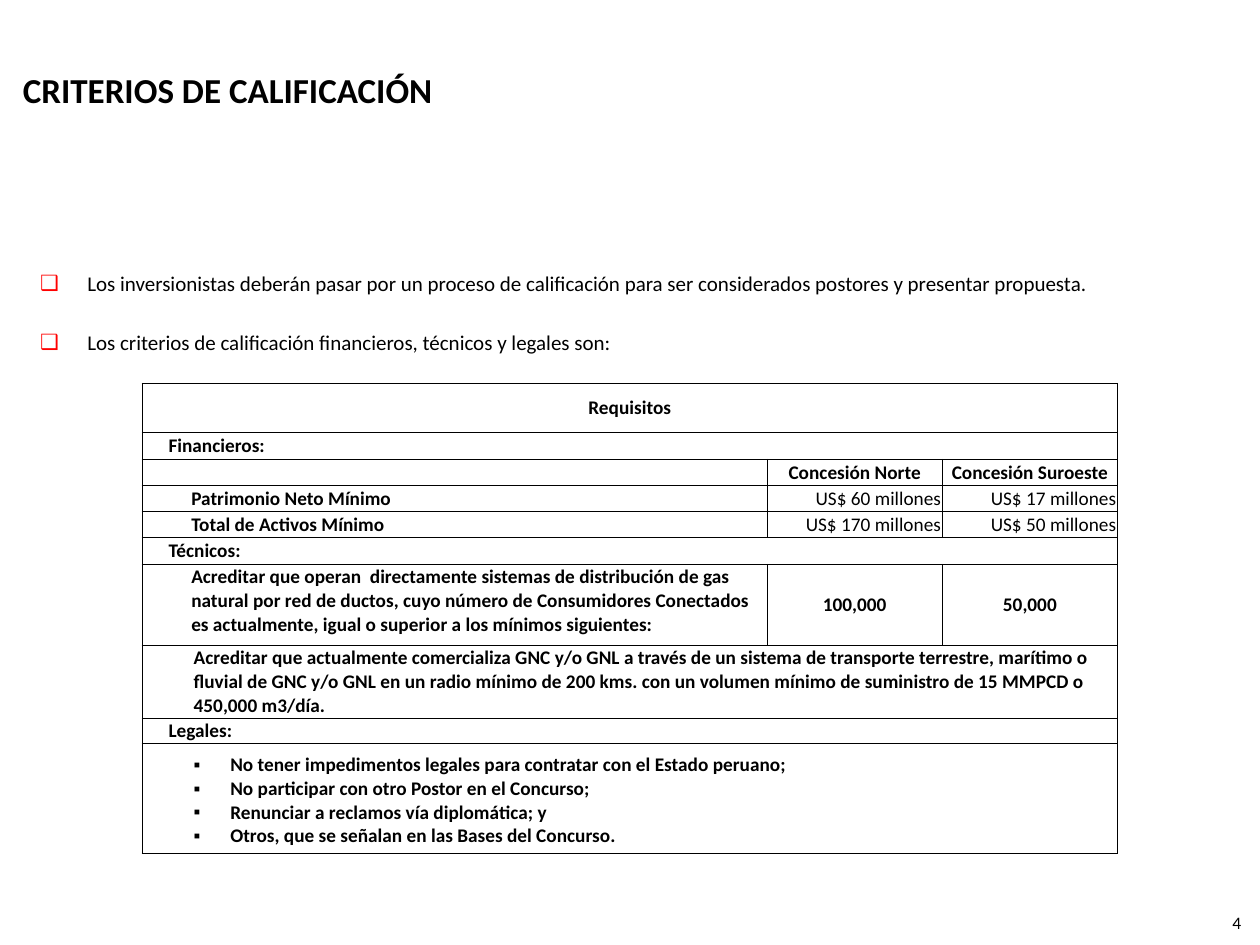
from lxml.etree import SubElement
from pptx import Presentation
from pptx.dml.color import RGBColor
from pptx.enum.text import MSO_ANCHOR as Anchor, PP_ALIGN as Align
from pptx.oxml.ns import qn
from pptx.util import Pt

BLACK = RGBColor(0, 0, 0)
RED = RGBColor(255, 0, 0)
FONT = "Calibri"

# Content
TITLE = "CRITERIOS DE CALIFICACIÓN"
POINTS = [
    "Los inversionistas deberán pasar por un proceso de calificación para ser "
    "considerados postores y presentar propuesta.",
    "Los criterios de calificación financieros, técnicos y legales son:",
]
LEGAL = [
    "No tener impedimentos legales para contratar con el Estado peruano;",
    "No participar con otro Postor en el Concurso;",
    "Renunciar a reclamos vía diplomática; y",
    "Otros, que se señalan en las Bases del Concurso.",
]
# Row kind, height, cells (one cell fills the whole row)
ROWS = [
    ("head", 28, ["Requisitos"]),
    ("group", 15.4, ["Financieros:"]),
    ("names", 14.9, ["", "Concesión Norte", "Concesión Suroeste"]),
    ("money", 14.9, ["Patrimonio Neto Mínimo", "US$ 60 millones", "US$ 17 millones"]),
    ("money", 14.9, ["Total de Activos Mínimo", "US$ 170 millones", "US$ 50 millones"]),
    ("group", 15.4, ["Técnicos:"]),
    ("count", 46.3, [
        "Acreditar que operan  directamente sistemas de distribución de gas "
        "natural por red de ductos, cuyo número de Consumidores Conectados es "
        "actualmente, igual o superior a los mínimos siguientes:",
        "100,000", "50,000"]),
    ("wide", 41.7, [
        "Acreditar que actualmente comercializa GNC y/o GNL a través de un "
        "sistema de transporte terrestre, marítimo o fluvial de GNC y/o GNL en "
        "un radio mínimo de 200 kms. con un volumen mínimo de suministro de "
        "15 MMPCD o 450,000 m3/día."]),
    ("group", 14.3, ["Legales:"]),
    ("list", 62.9, ["\n".join(LEGAL)]),
]
COLS = [357.2, 100.1, 100.1]
# Left indent of the first cell, by row kind
LEFT = {"head": 0, "group": 14.4, "names": 0, "money": 14.4, "count": 14.4,
        "wide": 28.8, "list": 49.7}


def style(para, size, bold=False, align=Align.LEFT):
    para.alignment = align
    font = para.font
    font.name, font.size, font.bold = FONT, Pt(size), bold
    font.color.rgb = BLACK


def indent(para, left, hang=0):
    props = para._p.get_or_add_pPr()
    props.set("marL", str(Pt(left)))
    props.set("indent", str(-Pt(hang)))
    return props


def bullet(para, mark, left, hang, color=None):
    props = indent(para, left, hang)
    if color is not None:
        tint = SubElement(props, qn("a:buClr"))
        SubElement(tint, qn("a:srgbClr"), val=str(color))
    SubElement(props, qn("a:buFont"), typeface="Arial")
    SubElement(props, qn("a:buChar"), char=mark)


def border(cell):
    props = cell._tc.get_or_add_tcPr()
    for i, side in enumerate(("lnL", "lnR", "lnT", "lnB")):
        line = SubElement(props, qn("a:" + side), w=str(Pt(0.5)))
        fill = SubElement(line, qn("a:solidFill"))
        SubElement(fill, qn("a:srgbClr"), val=str(BLACK))
        props.insert(i, line)


def textbox(left, top, width, height):
    frame = slide.shapes.add_textbox(Pt(left), Pt(top), Pt(width), Pt(height)).text_frame
    frame.word_wrap = True
    return frame


deck = Presentation()
deck.slide_width, deck.slide_height = Pt(720), Pt(540)
slide = deck.slides.add_slide(deck.slide_layouts[5])

# Title
title = slide.shapes.title
title.left, title.top, title.width, title.height = Pt(5.8), Pt(29.5), Pt(680), Pt(43.2)
title.text_frame.text = TITLE
title.text_frame.vertical_anchor = Anchor.MIDDLE
style(title.text_frame.paragraphs[0], 20, True)

# Main points
body = textbox(15.8, 151.2, 682.6, 60)
body.text = "\n".join(POINTS)
for i, para in enumerate(body.paragraphs):
    bullet(para, "❑", 27, 27, RED)
    style(para, 12)
    if i:
        para.space_before = Pt(19)

# Requirements table
high = sum(row[1] for row in ROWS)
table = slide.shapes.add_table(len(ROWS), len(COLS), Pt(81.2), Pt(219),
                               Pt(sum(COLS)), Pt(high)).table
table.first_row = table.horz_banding = False
for col, width in zip(table.columns, COLS):
    col.width = Pt(width)

for r, (kind, height, texts) in enumerate(ROWS):
    table.rows[r].height = Pt(height)
    if len(texts) == 1:
        table.cell(r, 0).merge(table.cell(r, len(COLS) - 1))
    for c in range(len(COLS)):
        cell = table.cell(r, c)
        cell.fill.background()
        border(cell)
        cell.margin_left = cell.margin_right = cell.margin_top = Pt(0.7)
        cell.margin_bottom = 0
        if c < len(texts):
            cell.text = texts[c]
        top = c == 0 and kind in ("count", "wide", "list")
        cell.vertical_anchor = Anchor.TOP if top else Anchor.MIDDLE
        if c == 0 and kind in ("money", "count"):
            cell.margin_left = Pt(13.7)
        if kind == "list":
            cell.margin_top = Pt(5.6)
        align = Align.LEFT
        if c or kind == "head":
            align = Align.RIGHT if kind == "money" else Align.CENTER
        for para in cell.text_frame.paragraphs:
            if kind == "list" and c == 0:
                bullet(para, "▪", LEFT[kind], 20.9)
            elif c == 0:
                indent(para, LEFT[kind])
            style(para, 11, not (kind == "money" and c), align)
            if not para.runs:
                SubElement(para._p, qn("a:endParaRPr"), sz="1100")

# Page number
page = textbox(680.4, 517.7, 36, 23)
page.text = "4"
style(page.paragraphs[0], 10, align=Align.RIGHT)

deck.save("out.pptx")
